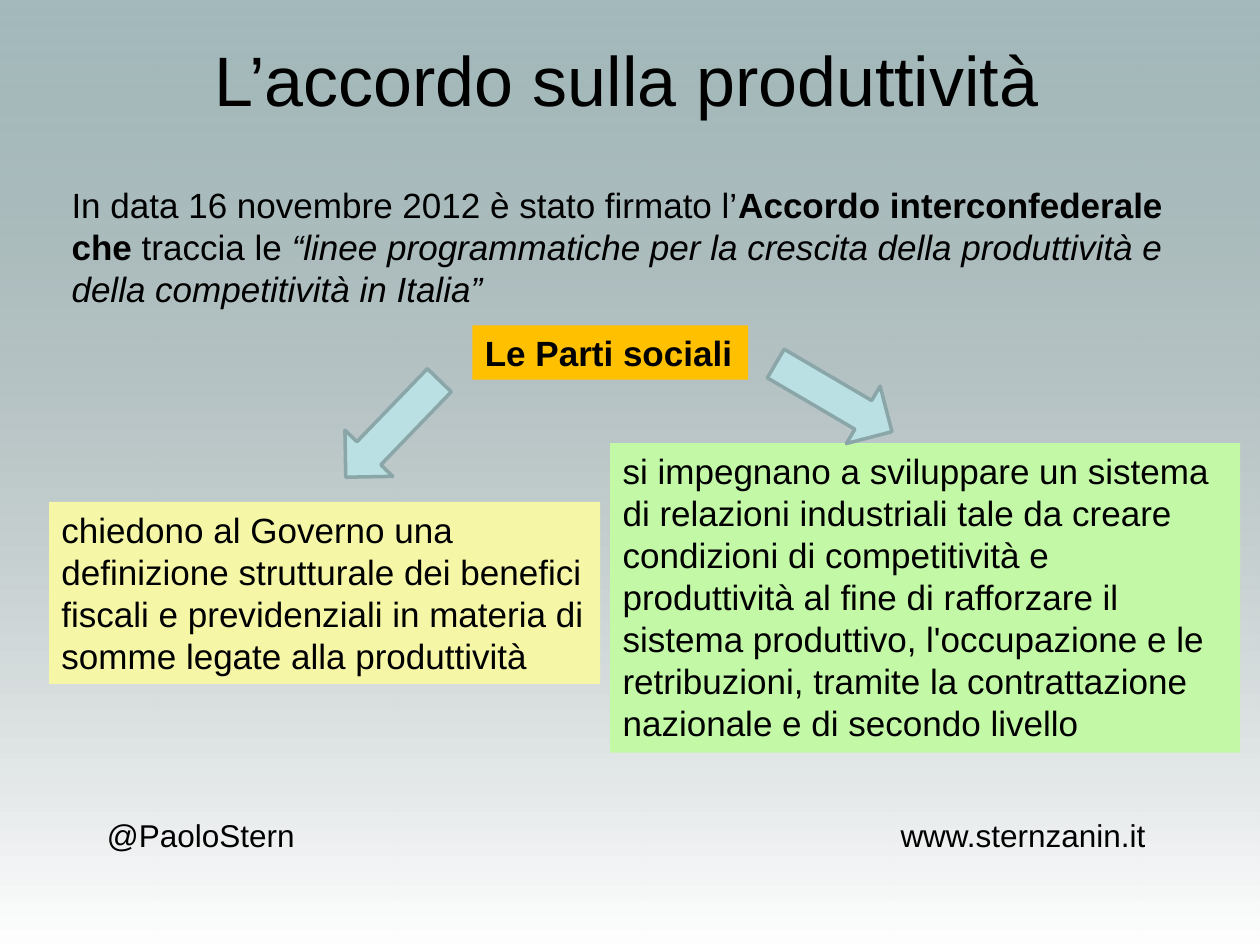
from dataclasses import dataclass
from typing import Optional

from lxml.etree import SubElement
from pptx import Presentation
from pptx.dml.color import RGBColor as RGB
from pptx.enum.shapes import MSO_SHAPE as SHAPE
from pptx.enum.text import MSO_ANCHOR as ANCHOR, PP_ALIGN as ALIGN
from pptx.oxml.ns import qn
from pptx.util import Pt


@dataclass(frozen=True)
class Theme:
    font: str = "Arial"
    text: str = "000000"
    background: str = "BBE0E3"
    shade: str = "808080"
    shade_opacity: int = 40
    white: str = "FFFFFF"
    request: str = "F5F7A7"
    parties: str = "FFC000"
    commitment: str = "C3F8A6"
    arrow: str = "BBE0E3"
    arrow_line: str = "8AA6A8"
    title_size: int = 40
    body_size: int = 20
    footer_size: int = 18


@dataclass(frozen=True)
class Run:
    text: str
    bold: bool = False
    italic: bool = False


@dataclass(frozen=True)
class Box:
    left: float
    top: float
    width: float
    height: float
    runs: tuple[Run, ...]
    size: int
    fill: Optional[str] = None


@dataclass(frozen=True)
class Arrow:
    left: float
    top: float
    rotation: float


THEME = Theme()
WIDTH, HEIGHT = 720, 540
ARROW_WIDTH, ARROW_HEIGHT = 77, 38

BOXES = (
    Box(54, 463, 130, 29, (Run("@PaoloStern"),), THEME.footer_size),
    Box(507.5, 463, 176, 29, (Run("www.sternzanin.it"),), THEME.footer_size),
    Box(33.8, 101.5, 652, 80, (
        Run("In data 16 novembre 2012 è stato firmato l’"),
        Run("Accordo interconfederale che ", bold=True),
        Run("traccia le "),
        Run("“linee programmatiche per la crescita della produttività e "
            "della competitività in Italia”", italic=True),
    ), THEME.body_size),
    Box(28, 286.8, 315, 104, (
        Run("chiedono al Governo una definizione strutturale dei benefici "
            "fiscali e previdenziali in materia di somme legate alla "
            "produttività"),
    ), THEME.body_size, THEME.request),
    Box(270, 186, 157.5, 31, (Run("Le Parti sociali", bold=True),),
        THEME.body_size, THEME.parties),
    Box(348.7, 253.2, 360, 177, (
        Run("si impegnano a sviluppare un sistema di relazioni industriali "
            "tale da creare condizioni di competitività e produttività al "
            "fine di rafforzare il sistema produttivo, l'occupazione e le "
            "retribuzioni, tramite la contrattazione nazionale e di secondo "
            "livello"),
    ), THEME.body_size, THEME.commitment),
)

ARROWS = (Arrow(185.8, 226, 134), Arrow(438, 208.2, 30.4))


def style_run(r, size: int, bold: bool = False, italic: bool = False) -> None:
    r.font.name = THEME.font
    r.font.size = Pt(size)
    r.font.bold = bold
    r.font.italic = italic
    r.font.color.rgb = RGB.from_string(THEME.text)


def add_backdrop(slide) -> None:
    """Colour the background and lay a translucent grey-to-white shade on it."""
    bg = slide.background.fill
    bg.solid()
    bg.fore_color.rgb = RGB.from_string(THEME.background)
    sp = slide.shapes.add_shape(SHAPE.RECTANGLE, 0, 0, Pt(WIDTH), Pt(HEIGHT))
    sp.shadow.inherit = False
    sp.line.fill.background()
    sp.fill.gradient()
    sp.fill.gradient_angle = 270
    for stop, color in zip(sp.fill.gradient_stops, (THEME.shade, THEME.white)):
        stop.color.rgb = RGB.from_string(color)
    shade = next(sp._element.iter(qn("a:srgbClr")))
    SubElement(shade, qn("a:alpha"), val=str(THEME.shade_opacity * 1000))
    slide.shapes._spTree.insert(2, sp._element)


def set_title(slide, text: str) -> None:
    title = slide.shapes.title
    title.left, title.top, title.width, title.height = (
        Pt(33.8), Pt(0), Pt(648), Pt(90))
    tf = title.text_frame
    tf.text = text
    tf.vertical_anchor = ANCHOR.MIDDLE
    p = tf.paragraphs[0]
    p.alignment = ALIGN.CENTER
    style_run(p.runs[0], THEME.title_size)


def add_box(slide, box: Box) -> None:
    sp = slide.shapes.add_textbox(
        Pt(box.left), Pt(box.top), Pt(box.width), Pt(box.height))
    if box.fill:
        sp.fill.solid()
        sp.fill.fore_color.rgb = RGB.from_string(box.fill)
    tf = sp.text_frame
    tf.word_wrap = True
    p = tf.paragraphs[0]
    for run in box.runs:
        r = p.add_run()
        r.text = run.text
        style_run(r, box.size, run.bold, run.italic)


def add_arrow(slide, arrow: Arrow) -> None:
    sp = slide.shapes.add_shape(
        SHAPE.RIGHT_ARROW, Pt(arrow.left), Pt(arrow.top),
        Pt(ARROW_WIDTH), Pt(ARROW_HEIGHT))
    sp.shadow.inherit = False
    sp.rotation = arrow.rotation
    sp.fill.solid()
    sp.fill.fore_color.rgb = RGB.from_string(THEME.arrow)
    sp.line.color.rgb = RGB.from_string(THEME.arrow_line)
    sp.line.width = Pt(2)


def main() -> None:
    prs = Presentation()
    prs.slide_width, prs.slide_height = Pt(WIDTH), Pt(HEIGHT)
    slide = prs.slides.add_slide(prs.slide_layouts.get_by_name("Title Only"))
    add_backdrop(slide)
    set_title(slide, "L’accordo sulla produttività")
    for box in BOXES:
        add_box(slide, box)
    for arrow in ARROWS:
        add_arrow(slide, arrow)
    prs.save("out.pptx")


if __name__ == "__main__":
    main()
